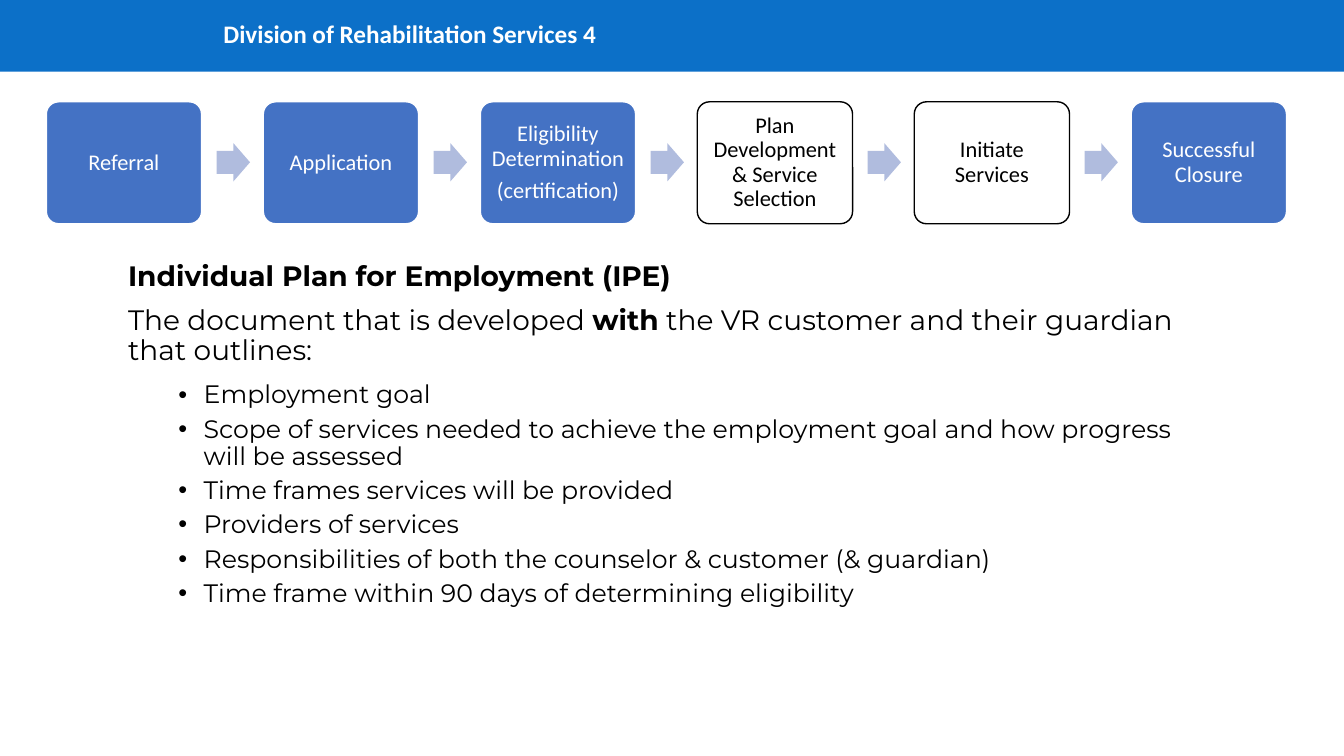
from lxml.etree import SubElement
from pptx import Presentation
from pptx.dml.color import RGBColor
from pptx.enum.shapes import MSO_SHAPE as Shape
from pptx.enum.text import MSO_ANCHOR as Anchor, MSO_AUTO_SIZE as AutoSize, PP_ALIGN as Align
from pptx.oxml.ns import qn
from pptx.util import Inches, Pt

WHITE, BLACK, BLUE = "FFFFFF", "000000", "4472C4"


def add_block(kind, left, top, width, height, fill, line=None):
    block = slide.shapes.add_shape(kind, Inches(left), Inches(top), Inches(width), Inches(height))
    block.shadow.inherit = False
    block.fill.solid()
    block.fill.fore_color.rgb = RGBColor.from_string(fill)
    if line:
        block.line.color.rgb = RGBColor.from_string(line)
        block.line.width = Pt(1)
    else:
        block.line.fill.background()
    return block


def write(para, text, size, font="Calibri", color=BLACK, bold=False, align=Align.LEFT,
          before=0, after=0, bullet=None):
    """Fill a paragraph; parts of the text between asterisks turn bold."""
    para.alignment, para.line_spacing = align, 0.9
    para.space_before, para.space_after = Pt(before), Pt(after)
    props = para._p.get_or_add_pPr()
    props.set("marL", str(Inches(0.75 if bullet else 0)))
    props.set("indent", str(Inches(-0.25 if bullet else 0)))
    if bullet:
        para.level = 1
        SubElement(props, qn("a:buFont"), typeface="Arial")
        SubElement(props, qn("a:buChar"), char=bullet)
    else:
        SubElement(props, qn("a:buNone"))
    for index, part in enumerate(text.split("*")):
        span = para.add_run()
        span.text = part
        span.font.name, span.font.size = font, Pt(size)
        span.font.bold = bold or index % 2 == 1
        span.font.color.rgb = RGBColor.from_string(color)


deck = Presentation()
deck.slide_width, deck.slide_height = Inches(13.33), Inches(7.5)
slide = deck.slides.add_slide(deck.slide_layouts[1])

# Header band and title
title = slide.shapes.title
title.left, title.top, title.width, title.height = map(Inches, (0.29, 0.16, 7.55, 0.38))
title.text_frame.vertical_anchor = Anchor.MIDDLE
title.text_frame.auto_size = AutoSize.NONE
write(title.text_frame.paragraphs[0], "Division of Rehabilitation Services 4", 18,
      color=WHITE, bold=True, align=Align.CENTER)
band = add_block(Shape.RECTANGLE, 0, 0, 13.33, 0.71, "0C70C8")
title._element.addprevious(band._element)

# Process steps: lines of text, and whether the step is highlighted
steps = [
    (["Referral"], False),
    (["Application"], False),
    (["Eligibility Determination", "(certification)"], False),
    (["Plan Development & Service Selection"], True),
    (["Initiate Services"], True),
    (["Successful Closure"], False),
]
step_pitch = 2.152
for number, (lines, highlighted) in enumerate(steps):
    left = 0.46 + number * step_pitch
    fill, ink = (WHITE, BLACK) if highlighted else (BLUE, WHITE)
    box = add_block(Shape.ROUNDED_RECTANGLE, left, 1.01, 1.54, 1.21, fill, ink)
    box.adjustments[0] = 0.1
    frame = box.text_frame
    frame.word_wrap = True
    frame.vertical_anchor = Anchor.MIDDLE
    frame.margin_left = frame.margin_right = frame.margin_top = frame.margin_bottom = Inches(0.07)
    for index, line in enumerate(lines):
        para = frame.add_paragraph() if index else frame.paragraphs[0]
        write(para, line, 16, color=ink, align=Align.CENTER, after=5.6)
    if number < len(steps) - 1:
        arrow = add_block(Shape.RIGHT_ARROW, left + 1.69, 1.42, 0.33, 0.38, "B0BCDE")
        arrow.adjustments[0] = 0.6

# Plan description
body = slide.placeholders[1]
body.left, body.top, body.width, body.height = map(Inches, (1.17, 2.55, 10.96, 4.26))
frame = body.text_frame
frame.auto_size = AutoSize.NONE
write(frame.paragraphs[0], "Individual Plan for Employment (IPE)", 20, "Montserrat", bold=True)
write(frame.add_paragraph(),
      "The document that is developed *with* the VR customer and their guardian that outlines:",
      20, "Montserrat", before=10, after=6)
for item in [
    "Employment goal",
    "Scope of services needed to achieve the employment goal and how progress will be assessed",
    "Time frames services will be provided",
    "Providers of services",
    "Responsibilities of both the counselor & customer (& guardian)",
    "Time frame within 90 days of determining eligibility",
]:
    write(frame.add_paragraph(), item, 18, "Montserrat", before=5, bullet="•")

deck.save("out.pptx")
